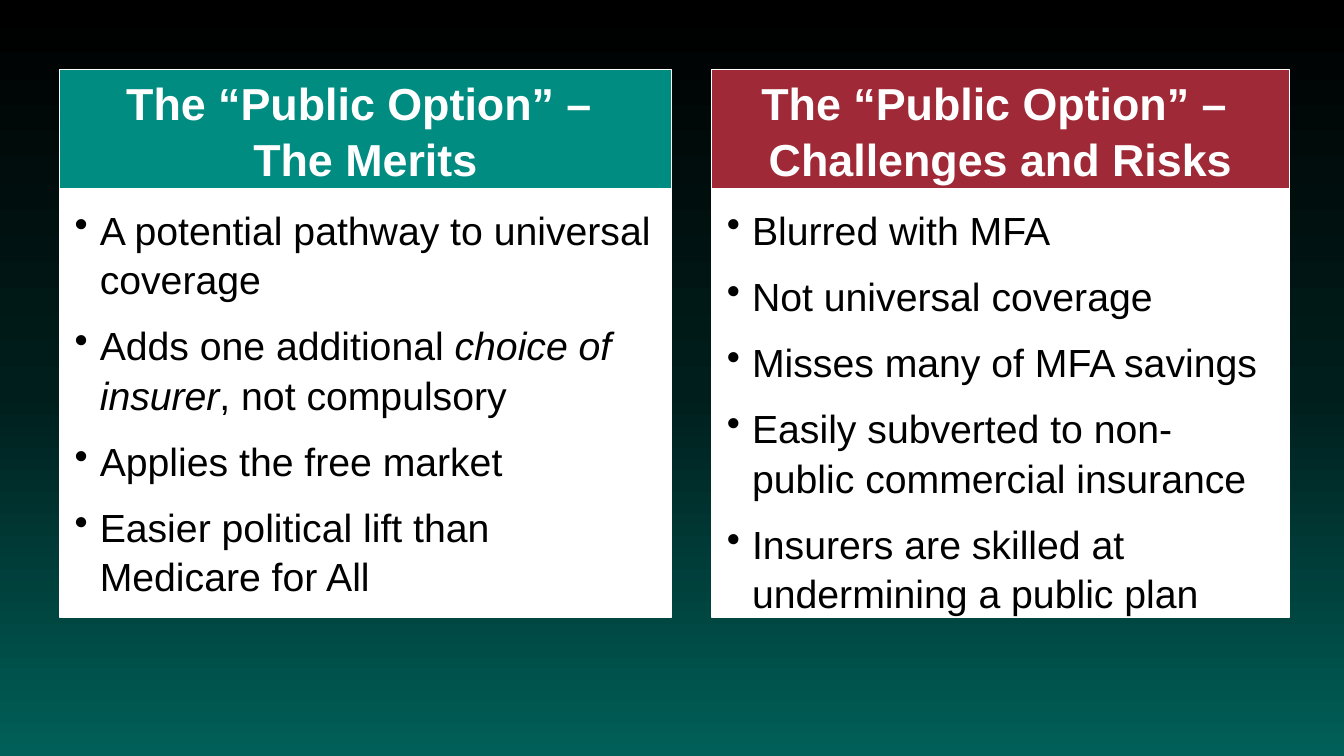
"""Build a slide that sets the merits of the public option beside its risks."""
from dataclasses import dataclass

import lxml.etree
import pptx
import pptx.dml.color
import pptx.enum.shapes
import pptx.enum.text
import pptx.oxml.ns
import pptx.util

EMU_PER_PX = 9144
FONT = "Arial"
COLORS = {"white": "FFFFFF", "black": "000000", "teal": "008C81", "red": "9F2936",
          "dark": "001E1C", "deep": "006059"}
BACKGROUND = [(0, "black"), (52, "dark"), (100, "deep")]
HEAD_TOP, HEAD_H, BODY_H = 69, 118, 425
INDENT = 25


@dataclass
class Panel:
    left: int
    width: int
    color: str
    title: list[str]
    points: list[list[str]]


PANELS = [
    Panel(706, 573, "red",
          ["The “Public Option” – ", "Challenges and Risks"],
          [["Blurred with MFA"],
           ["Not universal coverage"],
           ["Misses many of MFA savings"],
           ["Easily subverted to non-public commercial insurance"],
           ["Insurers are skilled at undermining a public plan"]]),
    Panel(59, 607, "teal",
          ["The “Public Option” – ", "The Merits"],
          [["A potential pathway to universal coverage"],
           ["Adds one additional ", "choice of insurer", ", not compulsory"],
           ["Applies the free market"],
           ["Easier political lift than Medicare for All"]]),
]


def px(n: int) -> int:
    return pptx.util.Emu(n * EMU_PER_PX)


def rgb(name: str) -> pptx.dml.color.RGBColor:
    return pptx.dml.color.RGBColor.from_string(COLORS[name])


def sub(parent, tag: str, **attrs: str):
    return lxml.etree.SubElement(parent, pptx.oxml.ns.qn(tag), attrs)


def paint_background(s) -> None:
    fill = s.background.fill
    fill.gradient()
    fill.gradient_angle = 270
    stops = s.element.find(".//" + pptx.oxml.ns.qn("a:gsLst"))
    for stop in list(stops):
        stops.remove(stop)
    for percent, color in BACKGROUND:
        sub(sub(stops, "a:gs", pos=str(percent * 1000)), "a:srgbClr", val=COLORS[color])


def add_box(s, left: int, top: int, width: int, height: int, color: str,
            insets: tuple[int, int, int, int], anchor):
    sp = s.shapes.add_shape(pptx.enum.shapes.MSO_SHAPE.RECTANGLE,
                            px(left), px(top), px(width), px(height))
    sp.shadow.inherit = False
    sp.fill.solid()
    sp.fill.fore_color.rgb = rgb(color)
    sp.line.color.rgb = rgb("white")
    sp.line.width = pptx.util.Pt(1)
    tf = sp.text_frame
    tf.word_wrap = True
    tf.vertical_anchor = anchor
    tf.margin_left, tf.margin_top, tf.margin_right, tf.margin_bottom = map(px, insets)
    return tf


def add_text(tf, parts: list[str], *, size: int, color: str, align,
             bold: bool = False, bullet: bool = False, after: int = 0) -> None:
    p = tf.paragraphs[0] if not tf.paragraphs[0].runs else tf.add_paragraph()
    if bullet:
        pPr = p._p.get_or_add_pPr()
        pPr.set("marL", str(px(INDENT)))
        pPr.set("indent", str(-px(INDENT)))
        sub(pPr, "a:buChar", char="•")
    p.alignment = align
    p.line_spacing = 1.05
    p.space_after = pptx.util.Pt(after)
    for i, part in enumerate(parts):
        r = p.add_run()
        r.text = part
        r.font.name = FONT
        r.font.size = pptx.util.Pt(size)
        r.font.bold = bold
        r.font.italic = i % 2 == 1
        r.font.color.rgb = rgb(color)


def add_panel(s, panel: Panel) -> None:
    anchor, align = pptx.enum.text.MSO_ANCHOR, pptx.enum.text.PP_ALIGN
    tf = add_box(s, panel.left, HEAD_TOP + HEAD_H, panel.width, BODY_H, "white",
                 (15, 15, 19, 22), anchor.TOP)
    for parts in panel.points:
        add_text(tf, parts, size=28, color="black", align=align.LEFT, bullet=True, after=12)
    tf = add_box(s, panel.left, HEAD_TOP, panel.width, HEAD_H, panel.color,
                 (19, 11, 19, 11), anchor.MIDDLE)
    for line in panel.title:
        add_text(tf, [line], size=32, color="white", align=align.CENTER, bold=True)


def main() -> None:
    prs = pptx.Presentation()
    prs.slide_width, prs.slide_height = px(1333), px(750)
    s = prs.slides.add_slide(prs.slide_layouts[6])
    paint_background(s)
    for panel in PANELS:
        add_panel(s, panel)
    prs.save("out.pptx")


if __name__ == "__main__":
    main()
